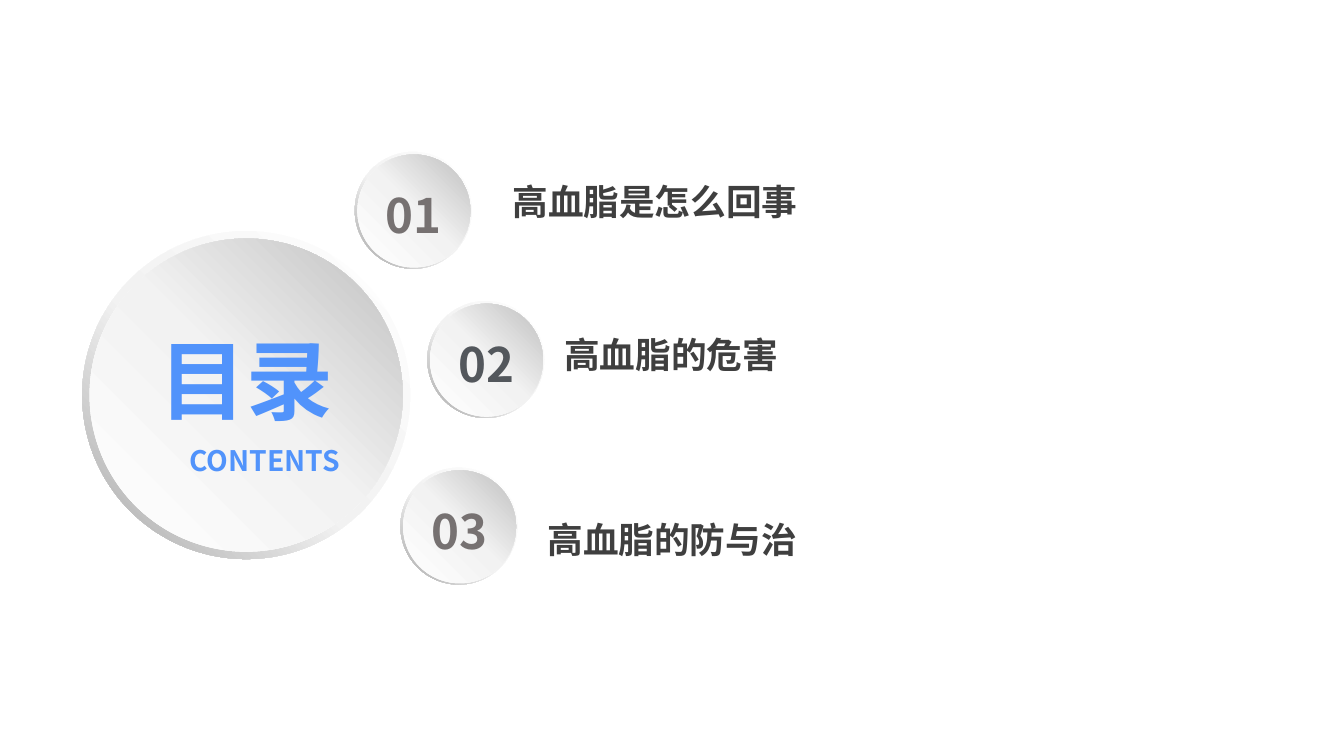
from copy import deepcopy
from pptx import Presentation
from pptx.dml.color import RGBColor
from pptx.enum.shapes import MSO_SHAPE
from pptx.enum.text import PP_ALIGN
from pptx.oxml.ns import qn
from pptx.util import Inches, Pt

RING, DISC = MSO_SHAPE.DONUT, MSO_SHAPE.OVAL
LEFT, MID = PP_ALIGN.LEFT, PP_ALIGN.CENTER
FONT = "Noto Sans CJK SC"
BLUE, DARK, GREY, SLATE = "5193FB", "3F3F3F", "767171", "53575C"
hue = RGBColor.from_string

deck = Presentation()
deck.slide_width = Inches(10)
deck.slide_height = deck.slide_width * 9 // 16
slide = deck.slides.add_slide(deck.slide_layouts[6])
col = deck.slide_width / 100


def write(text, x, y, wide, high, size=19.1, color=DARK, align=LEFT, pad=(1, 0.5), wrap=True):
    box = slide.shapes.add_textbox(*[round(n * col) for n in (x, y, wide, high)])
    frame = box.text_frame
    frame.word_wrap = wrap
    frame.margin_left = frame.margin_right = round(pad[0] * col)
    frame.margin_top = frame.margin_bottom = round(pad[1] * col)
    para = frame.paragraphs[0]
    para.alignment = align
    run = para.add_run()
    run.text = text
    font = run.font
    font.size, font.bold, font.name = Pt(size), True, FONT
    font.color.rgb = hue(color)
    latin = run._r.rPr.find(qn("a:latin"))
    east = deepcopy(latin)
    east.tag = qn("a:ea")
    latin.addnext(east)


def button(x, y, size, inset, inner):
    layers = [
        (RING, x, y, size, 225, 0.55, "A6A6A6"),
        (DISC, x + inset, y + inset, inner, 45, 0.51, "BFBFBF"),
    ]
    for kind, left, top, side, angle, mid, edge in layers:
        shape = slide.shapes.add_shape(kind, *[round(n * col) for n in (left, top, side, side)])
        shape.shadow.inherit = False
        shape.line.fill.background()
        if kind == RING:
            shape.adjustments[0] = 0.05
        fill = shape.fill
        fill.gradient()
        fill.gradient_angle = angle
        stops = shape._element.spPr.find(".//" + qn("a:gsLst"))
        stops.append(deepcopy(stops[-1]))
        tones = [(0, "FFFFFF"), (mid, "F2F2F2"), (1, edge)]
        for stop, (spot, tone) in zip(fill.gradient_stops, tones):
            stop.position = spot
            stop.color.rgb = hue(tone)


button(6.12, 17.2, 24.4, 0.55, 23.3)
write("目录", 10.1, 24.3, 16.5, 7.8, size=46.5, color=BLUE, align=MID, pad=(0, 0))

items = [
    ("高血脂是怎么回事", 26.4, 11.3, 37.15, 12.9, 29.7, GREY),
    ("高血脂的危害", 31.8, 22.4, 41, 24.3, 23.8, SLATE),
    ("高血脂的防与治", 29.8, 34.8, 39.75, 38.05, 26.3, GREY),
]
for num, (label, x, y, left, top, wide, tone) in enumerate(items, 1):
    button(x, y, 8.7, 0.2, 8.4)
    write(f"{num:02}", x + 1.43, y + 2.53, 5.9, 4.3, size=25.4, color=tone, align=MID, pad=(0, 0))
    write(label, left, top, wide, 4.2)

write("CONTENTS", 12.85, 32.5, 13.7, 3.5, size=15.1, color=BLUE, align=MID, wrap=False)
deck.save("out.pptx")
